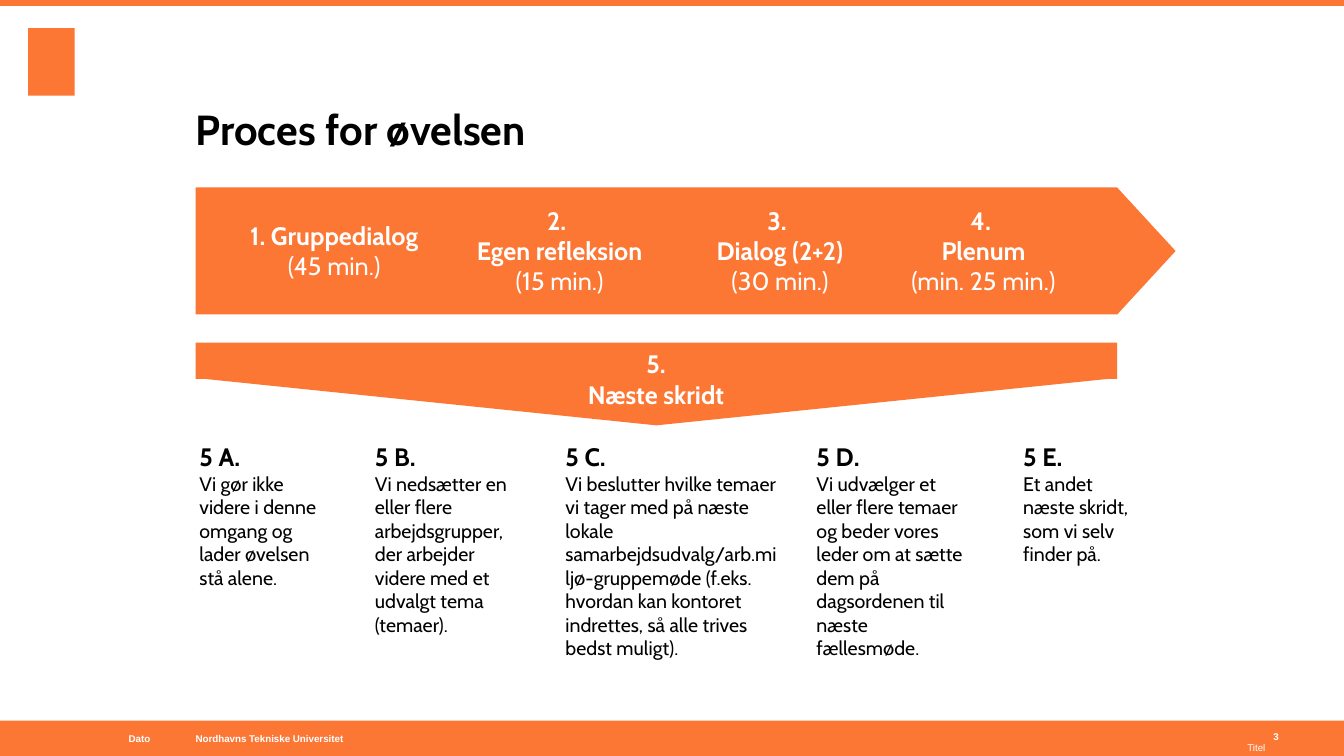
from dataclasses import dataclass

from pptx import Presentation
from pptx.dml.color import RGBColor
from pptx.enum.shapes import MSO_SHAPE
from pptx.enum.text import MSO_ANCHOR, PP_ALIGN
from pptx.util import Emu, Pt


@dataclass(frozen=True)
class Theme:
    orange: RGBColor = RGBColor(0xFC, 0x76, 0x34)
    white: RGBColor = RGBColor(0xFF, 0xFF, 0xFF)
    black: RGBColor = RGBColor(0, 0, 0)
    head: str = "Cabin"
    foot: str = "Arial"
    title: int = 30
    label: int = 18
    body: int = 14
    small: int = 7


THEME = Theme()
SCALE = 9144
WIDE, HIGH = 1333, 750
LEFT, SPAN = 194, 914

STAGES = [
    (245, 173, ["1. Gruppedialog"], "(45 min.)"),
    (427, 256, ["2. ", "Egen refleksion"], "(15 min.)"),
    (694, 159, ["3. ", "Dialog (2+2)"], "(30 min.)"),
    (848, 255, ["4. ", "Plenum"], "(min. 25 min.)"),
]

STEPS = [
    (188, 143, "A", "Vi gør ikke videre i denne omgang og lader øvelsen stå alene."),
    (362, 157, "B", "Vi nedsætter en eller flere arbejdsgrupper, der arbejder "
                    "videre med et udvalgt tema (temaer)."),
    (551, 231, "C", "Vi beslutter hvilke temaer vi tager med på næste lokale "
                    "samarbejdsudvalg/arb.miljø-gruppemøde (f.eks. hvordan kan "
                    "kontoret indrettes, så alle trives bedst muligt)."),
    (800, 174, "D", "Vi udvælger et eller flere temaer og beder vores leder om "
                    "at sætte dem på dagsordenen til næste fællesmøde."),
    (1005, 132, "E", "Et andet næste skridt, som vi selv finder på."),
]

FOOTER = [
    ((28, 715, 121, 35), "Dato", True, PP_ALIGN.RIGHT),
    ((LEFT, 715, 372, 35), "Nordhavns Tekniske Universitet", True, PP_ALIGN.LEFT),
    ((654, 724, 601, 35), "Titel", False, PP_ALIGN.RIGHT),
    ((1263, 713, 47, 35), "3", True, PP_ALIGN.LEFT),
]


def px(n):
    return Emu(n * SCALE)


def block(slide, kind, box, turn=0):
    shape = slide.shapes.add_shape(kind, *map(px, box))
    shape.shadow.inherit = False
    shape.fill.solid()
    shape.fill.fore_color.rgb = THEME.orange
    shape.line.fill.background()
    shape.rotation = turn


def frame(slide, box, anchor=MSO_ANCHOR.MIDDLE, pad=(0, 0)):
    text = slide.shapes.add_textbox(*map(px, box)).text_frame
    text.word_wrap = True
    text.vertical_anchor = anchor
    text.margin_left = text.margin_right = px(pad[0])
    text.margin_top = text.margin_bottom = px(pad[1])
    return text


def style(font, size, color, bold=True, name=THEME.head):
    font.name = name
    font.size = Pt(size)
    font.bold = bold
    font.color.rgb = color


def lines(text, rows, size, color, align=PP_ALIGN.LEFT, name=THEME.head):
    for i, (words, bold) in enumerate(rows):
        para = text.add_paragraph() if i else text.paragraphs[0]
        para.text = words
        para.alignment = align
        style(para.font, size, color, bold, name)


def stage(slide, left, width, names, time):
    rows = [(name, True) for name in names] + [(time, False)]
    text = frame(slide, (left, 183, width, 131))
    lines(text, rows, THEME.label, THEME.white, PP_ALIGN.CENTER)


def step(slide, left, width, mark, words):
    text = frame(slide, (left, 433, width, 260), MSO_ANCHOR.TOP, (10, 5))
    para = text.paragraphs[0]
    para.font.name = THEME.head
    para.font.color.rgb = THEME.black
    head = para.add_run()
    head.text = f"5 {mark}. "
    head.font.size = Pt(THEME.label)
    head.font.bold = True
    para.add_line_break()
    body = para.add_run()
    body.text = words
    body.font.size = Pt(THEME.body)
    body.font.bold = False


def main():
    deck = Presentation()
    deck.slide_width, deck.slide_height = px(WIDE), px(HIGH)
    slide = deck.slides.add_slide(deck.slide_layouts[6])

    for box in [
        (28, 28, 46, 67),
        (0, 715, WIDE, 35),
        (0, 0, WIDE, 6),
        (LEFT, 186, SPAN, 126),
        (LEFT, 340, SPAN, 36),
    ]:
        block(slide, MSO_SHAPE.RECTANGLE, box)
    merge = MSO_SHAPE.FLOWCHART_MERGE
    block(slide, merge, (1074, 220, 126, 58), 270)
    block(slide, merge, (LEFT, 375, SPAN, 47))

    title = frame(slide, (LEFT, 47, 1018, 106), MSO_ANCHOR.BOTTOM)
    lines(title, [("Proces for øvelsen", True)], THEME.title, THEME.black)

    for item in STAGES:
        stage(slide, *item)

    label = frame(slide, (526, 346, 255, 61), MSO_ANCHOR.TOP)
    rows = [("5. ", True), ("Næste skridt ", True)]
    lines(label, rows, THEME.label, THEME.white, PP_ALIGN.CENTER)

    for item in STEPS:
        step(slide, *item)

    for box, words, bold, align in FOOTER:
        text = frame(slide, box)
        lines(text, [(words, bold)], THEME.small, THEME.white, align, THEME.foot)

    deck.save("out.pptx")


if __name__ == "__main__":
    main()
